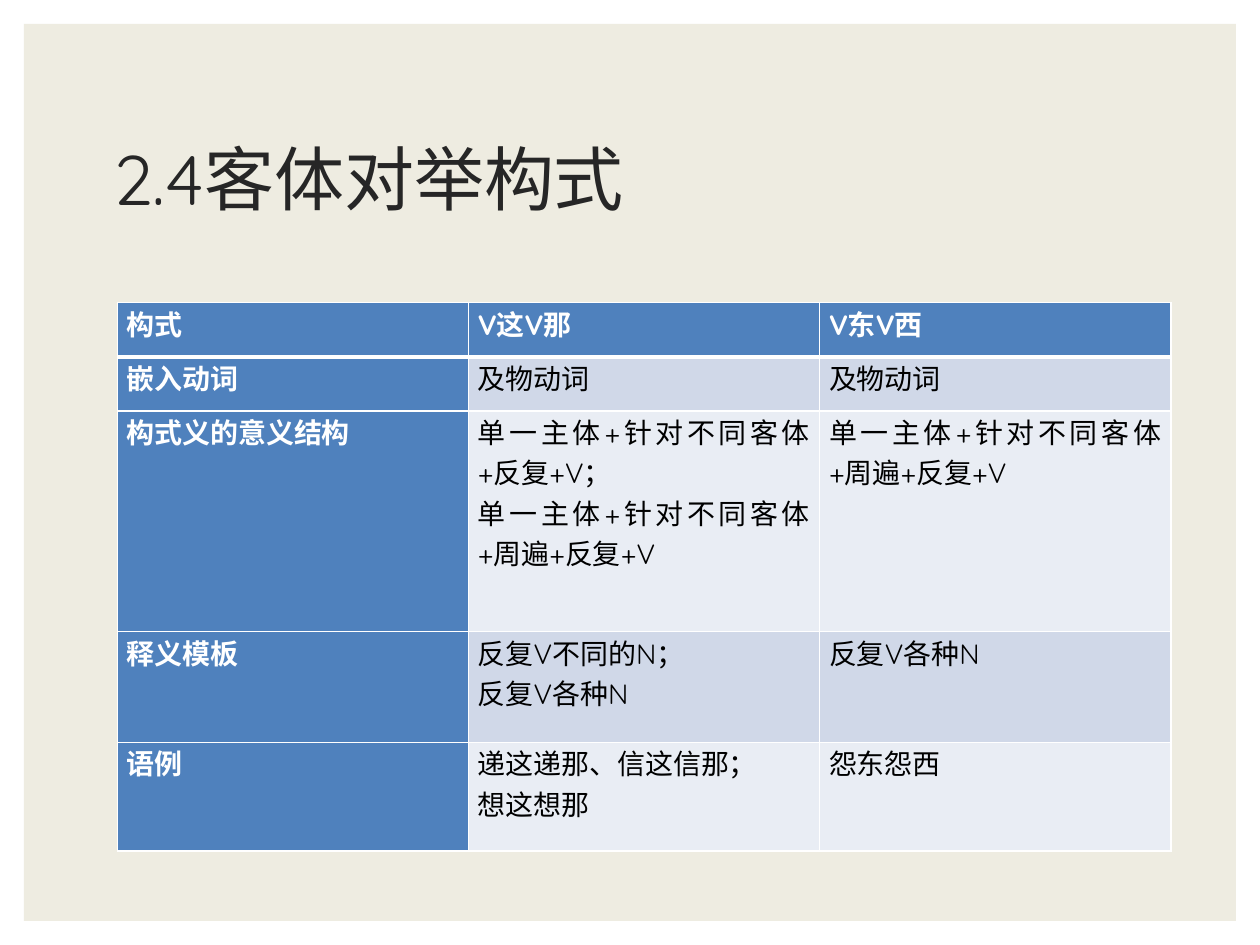
from lxml.etree import SubElement
from pptx import Presentation
from pptx.dml.color import RGBColor
from pptx.enum.shapes import MSO_SHAPE as Shape
from pptx.enum.text import MSO_ANCHOR as Anchor, PP_ALIGN as Align
from pptx.oxml.ns import qn
from pptx.util import Pt

FONT = "Quicksand"
WHITE, BLACK, INK = "FFFFFF", "000000", "262626"
BLUE, PALE, PALER, CREAM = "4F81BD", "D0D8E8", "E9EDF4", "EEECE1"

ROWS = [
    (["构式"], ["V这V那"], ["V东V西"]),
    (["嵌入动词"], ["及物动词"], ["及物动词"]),
    (["构式义的意义结构"],
     ["单一主体+针对不同客体+反复+V；", "单一主体+针对不同客体+周遍+反复+V"],
     ["单一主体+针对不同客体+周遍+反复+V"]),
    (["释义模板"], ["反复V不同的N；", "反复V各种N"], ["反复V各种N"]),
    (["语例"], ["递这递那、信这信那；", "想这想那"], ["怨东怨西"]),
]
ROW_HEIGHTS = [31, 31, 126, 63.4, 62]


def color(hex_string):
    return RGBColor.from_string(hex_string)


class SlideWriter:
    def __init__(self, slide, font):
        self.slide = slide
        self.font = font

    def run(self, paragraph, text, size, ink, bold=False):
        run = paragraph.add_run()
        run.text = text
        run.font.name = self.font
        run.font.size = Pt(size)
        run.font.bold = bold
        run.font.color.rgb = color(ink)

    def panel(self, left, top, width, height, fill):
        panel = self.slide.shapes.add_shape(
            Shape.RECTANGLE, Pt(left), Pt(top), Pt(width), Pt(height))
        panel.shadow.inherit = False
        panel.fill.solid()
        panel.fill.fore_color.rgb = color(fill)
        panel.line.fill.background()

    def title(self, left, top, width, height, text):
        frame = self.slide.shapes.add_textbox(
            Pt(left), Pt(top), Pt(width), Pt(height)).text_frame
        frame.word_wrap = True
        frame.vertical_anchor = Anchor.MIDDLE
        heading = frame.paragraphs[0]
        heading.line_spacing = 0.9
        self.run(heading, text, 40, INK)

    def border(self, cell, side, width):
        properties = cell._tc.get_or_add_tcPr()
        line = SubElement(properties, qn(f"a:ln{side}"), w=str(Pt(width)))
        fill = SubElement(line, qn("a:solidFill"))
        SubElement(fill, qn("a:srgbClr"), val=WHITE)

    def cell(self, cell, lines, fill, ink, bold, borders):
        for side, width in borders.items():
            self.border(cell, side, width)
        cell.fill.solid()
        cell.fill.fore_color.rgb = color(fill)
        cell.margin_left = cell.margin_right = Pt(5.4)
        cell.margin_top = cell.margin_bottom = 0
        frame = cell.text_frame
        for index, text in enumerate(lines):
            paragraph = frame.add_paragraph() if index else frame.paragraphs[0]
            paragraph.alignment = Align.JUSTIFY
            self.run(paragraph, text, 16, ink, bold)

    def table(self, left, top, width, heights, rows):
        table = self.slide.shapes.add_table(
            len(rows), len(rows[0]), Pt(left), Pt(top),
            Pt(width), Pt(sum(heights))).table
        for row, height in zip(table.rows, heights):
            row.height = Pt(height)
        for r, row in enumerate(rows):
            borders = {"L": 1, "R": 1, "T": 3 if r == 1 else 1,
                       "B": 3 if r == 0 else 1}
            for c, lines in enumerate(row):
                label = r == 0 or c == 0
                fill = BLUE if label else PALE if r % 2 else PALER
                self.cell(table.cell(r, c), lines, fill,
                          WHITE if label else BLACK, label, borders)


def main():
    deck = Presentation()
    deck.slide_width, deck.slide_height = Pt(720), Pt(540)
    writer = SlideWriter(deck.slides.add_slide(deck.slide_layouts[6]), FONT)
    writer.panel(13.7, 13.7, 692.6, 512.6, CREAM)
    writer.title(57.6, 50.4, 604.8, 108, "2.4客体对举构式")
    writer.table(67, 173, 602, ROW_HEIGHTS, ROWS)
    deck.save("out.pptx")


if __name__ == "__main__":
    main()
